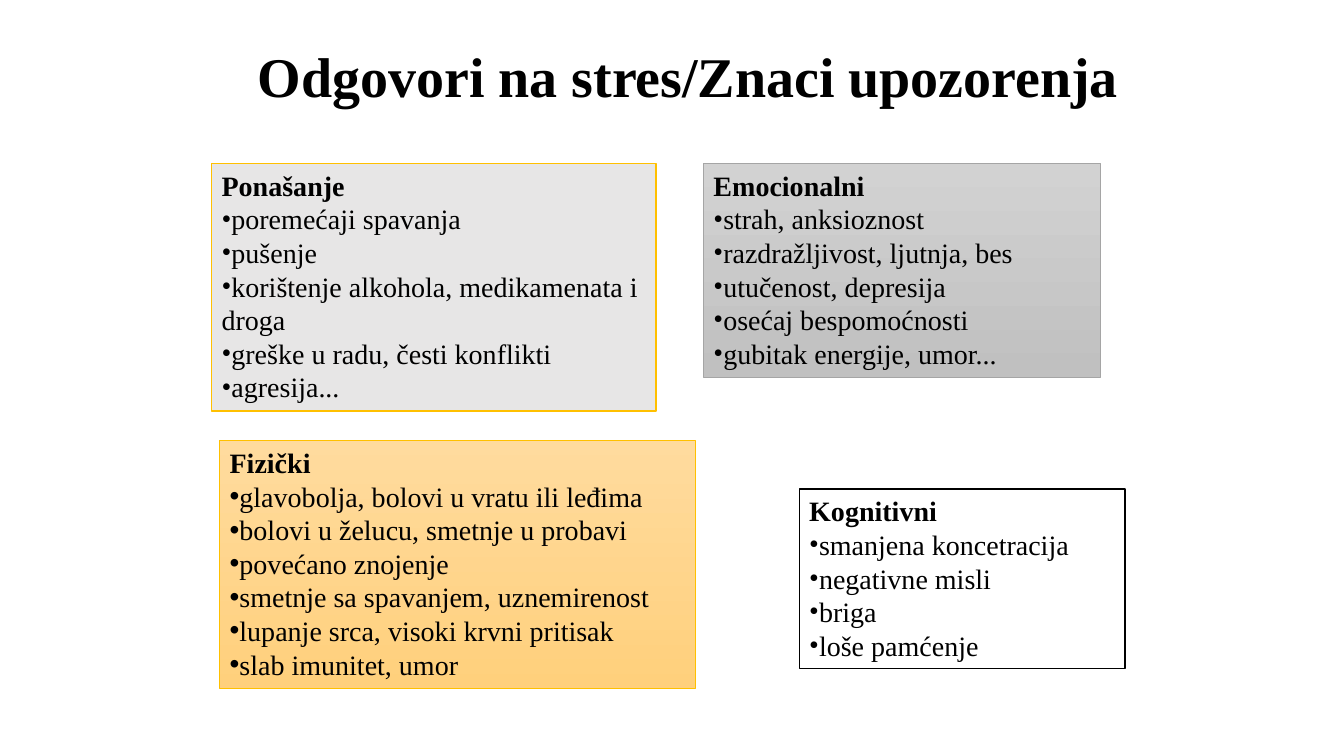
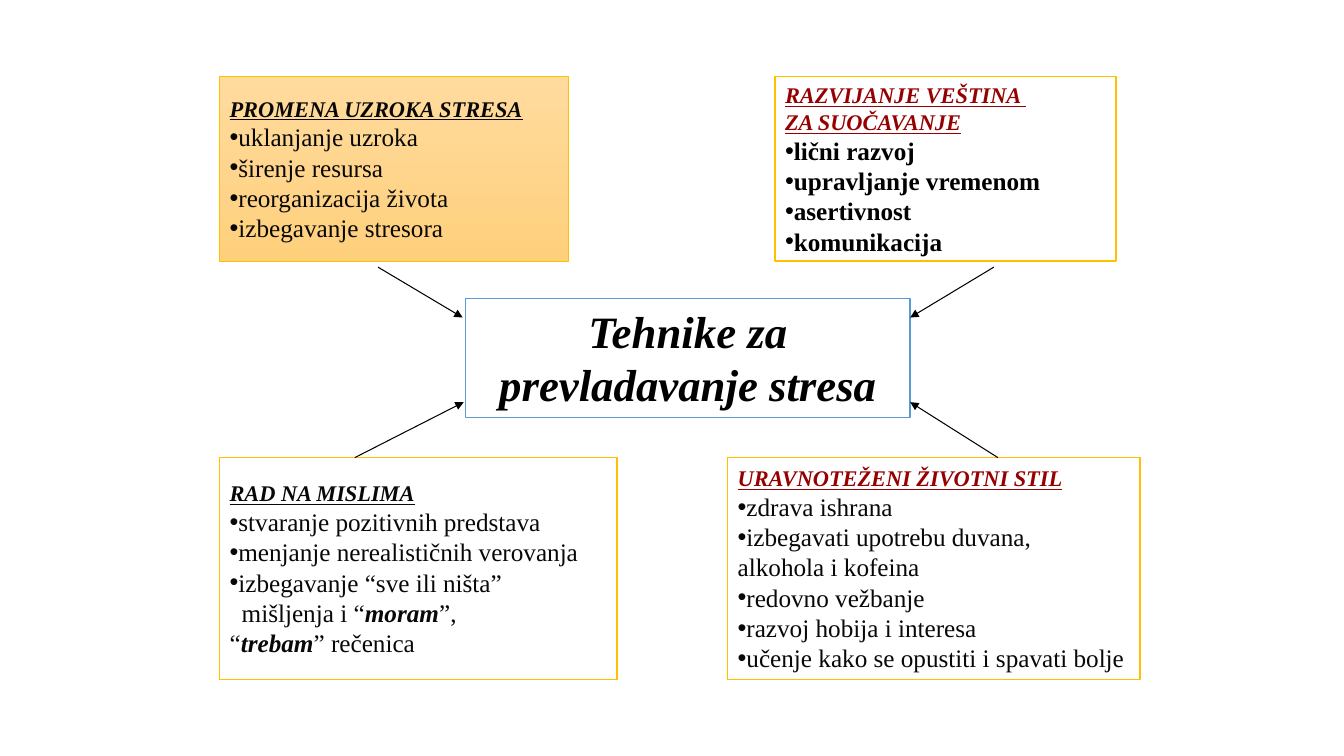
import pptx
import pptx.dml.color
import pptx.enum.shapes
import pptx.enum.text
import pptx.oxml
import pptx.oxml.ns
import pptx.util
from pptx.dml.color import RGBColor
from pptx.util import Inches

FONT = "Times New Roman"
ROUND_BULLET = "Arial"
BLACK = RGBColor(0x00, 0x00, 0x00)
INK = RGBColor(0x08, 0x08, 0x08)
WHITE = RGBColor(0xFF, 0xFF, 0xFF)
RED = RGBColor(0x96, 0x00, 0x00)
GOLD = RGBColor(0xFF, 0xC0, 0x00)
BLUE = RGBColor(0x5B, 0x9B, 0xD5)
GRAY = RGBColor(0xA5, 0xA5, 0xA5)
LIGHT_GRAY = RGBColor(0xE7, 0xE6, 0xE6)
GRAY_FADE = (RGBColor(0xD2, 0xD2, 0xD2), RGBColor(0xC0, 0xC0, 0xC0))
GOLD_FADE = (RGBColor(0xFF, 0xDB, 0x9E), RGBColor(0xFF, 0xD0, 0x7C))

TOP = pptx.enum.text.MSO_ANCHOR.TOP
MIDDLE = pptx.enum.text.MSO_ANCHOR.MIDDLE
CENTER = pptx.enum.text.PP_ALIGN.CENTER
LEFT = pptx.enum.text.PP_ALIGN.LEFT

TITLE = {"size": 40, "bold": True, "color": BLACK}
HUB = {"size": 32, "bold": True, "italic": True, "color": BLACK}
SIGN_HEADING = {"size": 20, "bold": True, "color": BLACK}
SIGN_BODY = {"size": 20, "color": BLACK}
DARK_HEADING = {"size": 16, "bold": True, "italic": True, "underline": True, "color": INK}
RED_HEADING = {**DARK_HEADING, "color": RED}
METHOD_BODY = {"size": 18, "color": INK}
BOLD_BODY = {"size": 18, "bold": True, "color": BLACK}


def write(frame, lines, align=LEFT, bullet_font=ROUND_BULLET):
    """Write (text, format) lines: a leading • makes a bullet, a leading > an
    indent, and words between asterisks are bold italic."""
    frame.word_wrap = True
    for index, (text, look) in enumerate(lines):
        para = frame.paragraphs[0] if index == 0 else frame.add_paragraph()
        para.alignment = align
        settings = para._p.get_or_add_pPr()
        settings.set("marL", str(Inches(0.12) if text.startswith(">") else 0))
        settings.set("indent", "0")
        if text.startswith("•"):
            for tag, name, value in (("buFont", "typeface", bullet_font),
                                     ("buChar", "char", "•")):
                mark = pptx.oxml.parse_xml(
                    f'<a:{tag} {pptx.oxml.ns.nsdecls("a")} {name}="{value}"/>')
                settings.append(mark)
        for part, words in enumerate(text.lstrip("•>").split("*")):
            span = para.add_run()
            span.text = words
            emphasis = {"bold": True, "italic": True} if part % 2 else {}
            for name, value in {"name": FONT, **look, **emphasis}.items():
                if name == "color":
                    span.font.color.rgb = value
                elif name == "size":
                    span.font.size = pptx.util.Pt(value)
                else:
                    setattr(span.font, name, value)


def add_panel(page, place, fill, line, width, lines, anchor=TOP, **text_options):
    """Add an outlined text rectangle; a pair of colours fills it top to bottom."""
    box = page.shapes.add_shape(pptx.enum.shapes.MSO_SHAPE.RECTANGLE, *map(Inches, place))
    box.shadow.inherit = False
    if isinstance(fill, RGBColor):
        box.fill.solid()
        box.fill.fore_color.rgb = fill
    else:
        box.fill.gradient()
        box.fill.gradient_angle = 270
        for stop, color in zip(box.fill.gradient_stops, fill):
            stop.color.rgb = color
    box.line.color.rgb = line
    box.line.width = pptx.util.Pt(width)
    box.text_frame.vertical_anchor = anchor
    write(box.text_frame, lines, **text_options)


deck = pptx.Presentation()
deck.slide_width, deck.slide_height = Inches(40 / 3), Inches(7.5)
blank = deck.slide_layouts[6]

# Slide 1: warning signs of stress
page = deck.slides.add_slide(blank)
signs = [
    ((2.1, 1.62, 4.41, 2.46), LIGHT_GRAY, GOLD, 1, FONT, "Ponašanje",
     ["•poremećaji spavanja", "•pušenje", "•korištenje alkohola, medikamenata i droga",
      "•greške u radu, česti konflikti", "•agresija..."]),
    ((6.98, 1.62, 3.94, 2.12), GRAY_FADE, GRAY, 0.5, FONT, "Emocionalni",
     ["•strah, anksioznost", "•razdražljivost, ljutnja, bes", "•utučenost, depresija",
      "•osećaj bespomoćnosti", "•gubitak energije, umor..."]),
    ((2.18, 4.37, 4.72, 2.46), GOLD_FADE, GOLD, 0.5, ROUND_BULLET, "Fizički",
     ["•glavobolja, bolovi u vratu ili leđima", "•bolovi u želucu, smetnje u probavi",
      "•povećano znojenje", "•smetnje sa spavanjem, uznemirenost",
      "•lupanje srca, visoki krvni pritisak", "•slab imunitet, umor"]),
    ((7.93, 4.85, 3.23, 1.78), WHITE, BLACK, 1, FONT, "Kognitivni",
     ["•smanjena koncetracija", "•negativne misli", "•briga", "•loše pamćenje"]),
]
for place, fill, line, width, bullet_font, heading, items in signs:
    lines = [(heading, SIGN_HEADING)] + [(item, SIGN_BODY) for item in items]
    add_panel(page, place, fill, line, width, lines, bullet_font=bullet_font)
title = page.shapes.add_textbox(Inches(2.41), Inches(0.36), Inches(8.83), Inches(0.77))
write(title.text_frame, [("Odgovori na stres/Znaci upozorenja", TITLE)], CENTER)

# Slide 2: techniques around a central hub
page = deck.slides.add_slide(blank)
add_panel(page, (4.62, 2.96, 4.41, 1.18), WHITE, BLUE, 1,
          [("Tehnike za prevladavanje stresa", HUB)], align=CENTER)
methods = [
    ((2.18, 0.76, 3.46, 1.83), GOLD_FADE, 0.5, DARK_HEADING, METHOD_BODY,
     ["PROMENA UZROKA STRESA"],
     ["•uklanjanje uzroka", "•širenje resursa", "•reorganizacija života",
      "•izbegavanje stresora"]),
    ((7.69, 0.76, 3.38, 1.83), WHITE, 1, RED_HEADING, BOLD_BODY,
     ["RAZVIJANJE VEŠTINA ", "ZA SUOČAVANJE"],
     ["•lični razvoj", "•upravljanje vremenom", "•asertivnost", "•komunikacija"]),
    ((2.18, 4.54, 3.94, 2.2), WHITE, 1, DARK_HEADING, METHOD_BODY,
     ["RAD NA MISLIMA"],
     ["•stvaranje pozitivnih predstava", "•menjanje nerealističnih verovanja",
      "•izbegavanje “sve ili ništa”", ">mišljenja i “*moram*”,", "“*trebam*” rečenica"]),
    ((7.22, 4.54, 4.09, 2.2), WHITE, 1, RED_HEADING, METHOD_BODY,
     ["URAVNOTEŽENI ŽIVOTNI STIL"],
     ["•zdrava ishrana", "•izbegavati upotrebu duvana,", "alkohola i kofeina",
      "•redovno vežbanje", "•razvoj hobija i interesa",
      "•učenje kako se opustiti i spavati bolje"]),
]
for place, fill, width, heading_look, body_look, headings, items in methods:
    lines = [(heading, heading_look) for heading in headings]
    lines += [(item, body_look) for item in items]
    add_panel(page, place, fill, GOLD, width, lines, MIDDLE)

arrows = [(3.75, 2.65, 4.59, 3.15), (3.52, 4.54, 4.6, 3.99),
          (9.86, 2.65, 9.03, 3.15), (9.9, 4.54, 9.03, 3.99)]
for ends in arrows:
    arrow = page.shapes.add_connector(
        pptx.enum.shapes.MSO_CONNECTOR.STRAIGHT, *map(Inches, ends))
    arrow.line.color.rgb = BLACK
    arrow.line.width = pptx.util.Pt(0.75)
    namespace = pptx.oxml.ns.nsdecls("a")
    arrow.line._get_or_add_ln().append(
        pptx.oxml.parse_xml(f'<a:tailEnd {namespace} type="triangle"/>'))
    arrow._element.spPr.append(pptx.oxml.parse_xml(f"<a:effectLst {namespace}/>"))

deck.save("out.pptx")
